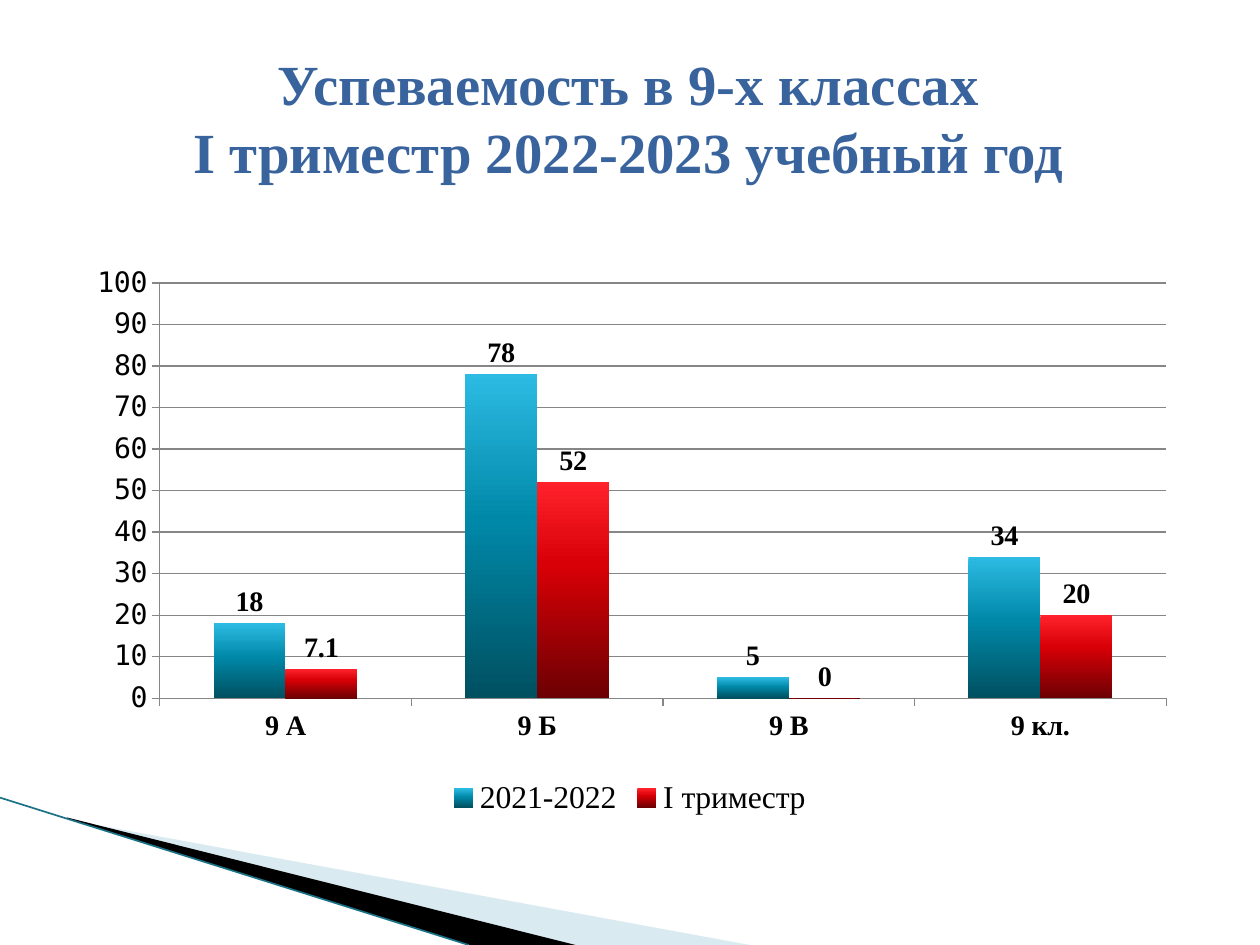
from dataclasses import dataclass

from lxml import etree
from pptx import Presentation
from pptx.chart.data import CategoryChartData
from pptx.dml.color import RGBColor
from pptx.enum.chart import XL_CHART_TYPE, XL_LABEL_POSITION, XL_LEGEND_POSITION, XL_TICK_MARK
from pptx.enum.shapes import MSO_CONNECTOR
from pptx.enum.text import MSO_ANCHOR, PP_ALIGN
from pptx.oxml.ns import qn
from pptx.util import Cm, Pt

CLUSTERED = XL_CHART_TYPE.COLUMN_CLUSTERED
OUTSIDE_END = XL_LABEL_POSITION.OUTSIDE_END
LEGEND_BOTTOM = XL_LEGEND_POSITION.BOTTOM
TICK_OUTSIDE = XL_TICK_MARK.OUTSIDE
STRAIGHT = MSO_CONNECTOR.STRAIGHT
MIDDLE = MSO_ANCHOR.MIDDLE
CENTER = PP_ALIGN.CENTER

BLACK = RGBColor(0x00, 0x00, 0x00)
TITLE_BLUE = RGBColor(0x39, 0x63, 0x9D)
PALE_BLUE = RGBColor(0xA0, 0xCB, 0xDC)
EDGE_TEAL = RGBColor(0x1B, 0x72, 0x86)
GRID_GRAY = RGBColor(0x86, 0x86, 0x86)
BLUE_STOPS = (RGBColor(0x2D, 0xBB, 0xE3), RGBColor(0x00, 0x88, 0xA8), RGBColor(0x00, 0x50, 0x60))
RED_STOPS = (RGBColor(0xFF, 0x22, 0x2C), RGBColor(0xD8, 0x00, 0x06), RGBColor(0x6C, 0x00, 0x03))

SERIF = "Times New Roman"
MONO = "DejaVu Sans Mono"
TITLE_FONT = {"name": SERIF, "size": Pt(32.4), "bold": True}
LABEL_FONT = {"name": SERIF, "size": Pt(16.1), "bold": True}
LEGEND_FONT = {"name": SERIF, "size": Pt(18.1), "bold": False}
VALUE_FONT = {"name": MONO, "size": Pt(16.1), "bold": False}
CHART_FONT = {"name": MONO, "size": Pt(18.1)}

TITLE_LINES = ("Успеваемость в 9-х классах", "I триместр 2022-2023 учебный год")
CATEGORIES = ("9 А", "9 Б", "9 В", "9 кл.")
PLOT_LAYOUT = {"x": 0.076, "y": 0.117, "w": 0.908, "h": 0.681}


@dataclass(frozen=True)
class Wedge:
    points: tuple[tuple[float, float], ...]
    color: RGBColor
    opacity: int


@dataclass(frozen=True)
class ColumnSeries:
    name: str
    values: tuple[float, ...]
    stops: tuple[RGBColor, ...]
    middle: int


WEDGES = (
    Wedge(((1.4, 16.53), (15.11, 19.05), (11.58, 19.05), (1.4, 16.51)), PALE_BLUE, 40),
    Wedge(((1.35, 16.48), (11.6, 19.05), (9.45, 19.05), (1.37, 16.51)), BLACK, 100),
)
SERIES = (
    ColumnSeries("2021-2022", (18, 78, 5, 34), BLUE_STOPS, 45),
    ColumnSeries("I триместр", (7.1, 52, 0, 20), RED_STOPS, 38),
)


def set_font(font, values: dict, color: RGBColor = BLACK) -> None:
    for attribute, value in values.items():
        setattr(font, attribute, value)
    font.color.rgb = color


def draw_wedge(slide, wedge: Wedge) -> None:
    start, *rest = [(Cm(x), Cm(y)) for x, y in wedge.points]
    builder = slide.shapes.build_freeform(*start)
    builder.add_line_segments(rest, close=True)
    shape = builder.convert_to_shape()
    shape.shadow.inherit = False
    shape.fill.solid()
    shape.fill.fore_color.rgb = wedge.color
    shape.line.fill.background()
    if wedge.opacity < 100:
        color = shape.fill._xPr.find(f"{qn('a:solidFill')}/{qn('a:srgbClr')}")
        etree.SubElement(color, qn("a:alpha"), val=str(wedge.opacity * 1000))


def draw_edge(slide) -> None:
    edge = slide.shapes.add_connector(STRAIGHT, Cm(0), Cm(16.08), Cm(9.45), Cm(19.05))
    edge.line.color.rgb = EDGE_TEAL
    edge.line.width = Pt(0.95)
    etree.SubElement(edge._element.spPr, qn("a:effectLst"))


def draw_title(slide) -> None:
    frame = slide.shapes.add_textbox(Cm(1.2), Cm(0.6), Cm(22.94), Cm(3.53)).text_frame
    frame.word_wrap = True
    frame.vertical_anchor = MIDDLE
    paragraph = frame.paragraphs[0]
    paragraph.text = "\v".join(TITLE_LINES)
    paragraph.alignment = CENTER
    paragraph.line_spacing = Pt(38.9)
    for run in paragraph.runs:
        set_font(run.font, TITLE_FONT, TITLE_BLUE)


def fill_gradient(fill, stops: tuple[RGBColor, ...], middle: int) -> None:
    fill.gradient()
    fill.gradient_angle = 270
    stop_list = fill._xPr.find(f"{qn('a:gradFill')}/{qn('a:gsLst')}")
    for stop in list(stop_list):
        stop_list.remove(stop)
    for position, color in zip((0, middle, 100), stops):
        stop = etree.SubElement(stop_list, qn("a:gs"), pos=str(position * 1000))
        etree.SubElement(stop, qn("a:srgbClr"), val=str(color))


def place_plot(chart) -> None:
    plot_area = chart._chartSpace.find(f"{qn('c:chart')}/{qn('c:plotArea')}")
    for layout in plot_area.findall(qn("c:layout")):
        plot_area.remove(layout)
    layout = etree.Element(qn("c:layout"))
    manual = etree.SubElement(layout, qn("c:manualLayout"))
    settings = {"layoutTarget": "inner", "xMode": "edge", "yMode": "edge", **PLOT_LAYOUT}
    for tag, value in settings.items():
        etree.SubElement(manual, qn(f"c:{tag}"), val=str(value))
    plot_area.insert(0, layout)


def draw_chart(slide) -> None:
    data = CategoryChartData()
    data.categories = CATEGORIES
    for column in SERIES:
        data.add_series(column.name, column.values)
    frame = slide.shapes.add_chart(CLUSTERED, Cm(1.52), Cm(4.27), Cm(22.35), Cm(12.29), data)
    chart = frame.chart
    chart.has_title = False
    set_font(chart.font, CHART_FONT)
    chart.has_legend = True
    chart.legend.position = LEGEND_BOTTOM
    chart.legend.include_in_layout = False
    set_font(chart.legend.font, LEGEND_FONT)

    for axis, font in ((chart.category_axis, LABEL_FONT), (chart.value_axis, VALUE_FONT)):
        axis.major_tick_mark = TICK_OUTSIDE
        axis.format.line.color.rgb = GRID_GRAY
        set_font(axis.tick_labels.font, font)
    value_axis = chart.value_axis
    for attribute, value in {"minimum_scale": 0, "maximum_scale": 100, "major_unit": 10}.items():
        setattr(value_axis, attribute, value)
    value_axis.major_gridlines.format.line.color.rgb = GRID_GRAY

    plot = chart.plots[0]
    for attribute, value in {"gap_width": 150, "overlap": 0, "vary_by_categories": False}.items():
        setattr(plot, attribute, value)
    for series, column in zip(plot.series, SERIES):
        fill_gradient(series.format.fill, column.stops, column.middle)
        series.data_labels.show_value = True
        series.data_labels.position = OUTSIDE_END
        set_font(series.data_labels.font, LABEL_FONT)
    place_plot(chart)


def main() -> None:
    presentation = Presentation()
    presentation.slide_width = Cm(25.4)
    presentation.slide_height = Cm(19.05)
    slide = presentation.slides.add_slide(presentation.slide_layouts[6])
    for wedge in WEDGES:
        draw_wedge(slide, wedge)
    draw_edge(slide)
    draw_title(slide)
    draw_chart(slide)
    presentation.save("out.pptx")


if __name__ == "__main__":
    main()
